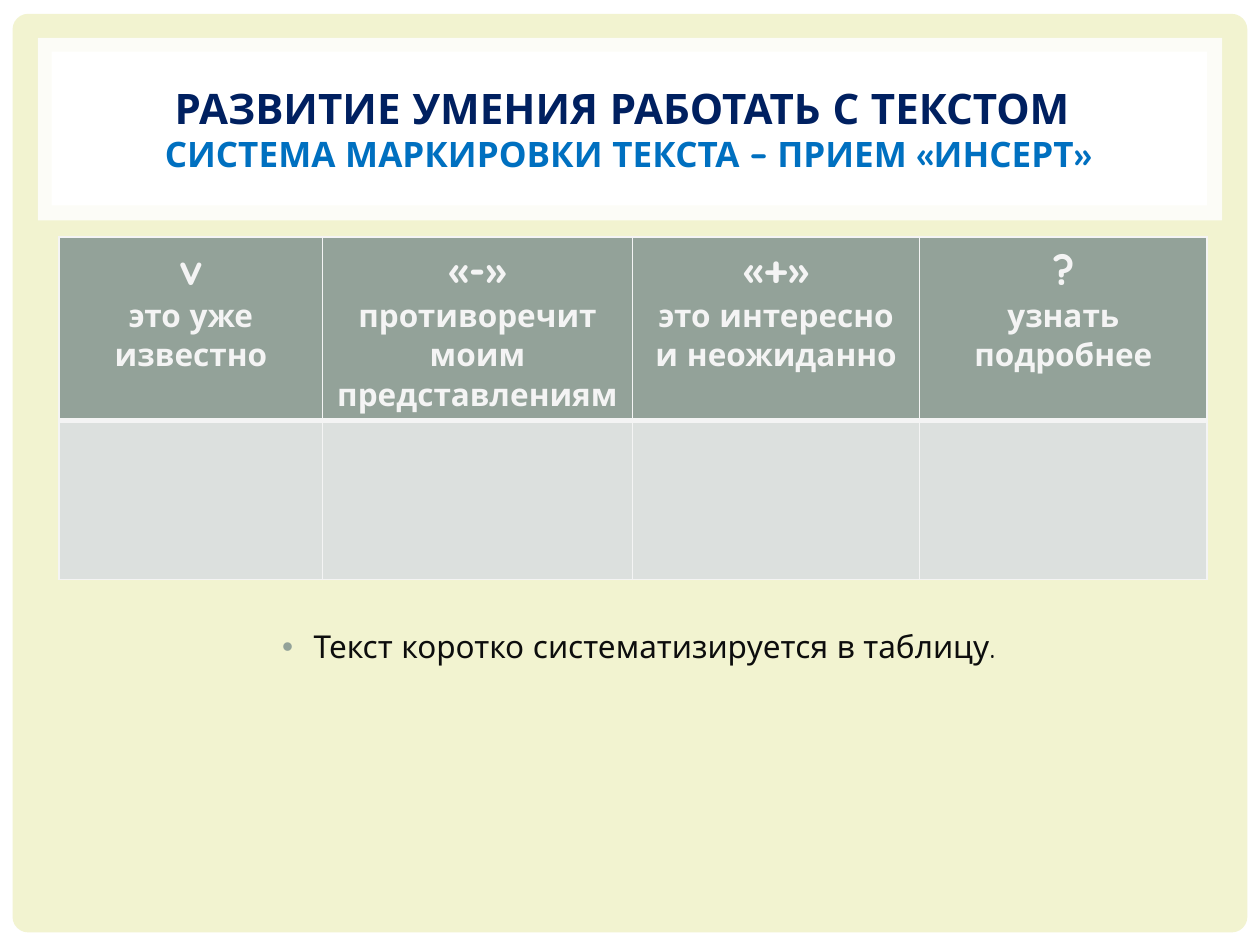
from lxml.etree import SubElement
from pptx import Presentation
from pptx.dml.color import RGBColor
from pptx.enum.shapes import MSO_SHAPE
from pptx.enum.text import MSO_ANCHOR, PP_ALIGN
from pptx.oxml.ns import qn
from pptx.util import Inches, Pt

FONT = "Quicksand"
CREAM, WHITE, SAGE, PALE, LIGHT = "F2F3D0", "FFFFFF", "93A299", "DCE0DE", "F4F4F4"
MARKS = [
    ("v", "это уже известно"),
    ("«-»", "противоречит моим представлениям"),
    ("«+»", "это интересно и неожиданно"),
    ("?", "узнать подробнее"),
]


def rgb(color):
    return RGBColor.from_string(color)


def style(r, size, color, bold=False):
    r.font.name = FONT
    r.font.size = Pt(size)
    r.font.bold = bold
    r.font.color.rgb = rgb(color)


def add_panel(slide, box, color, shape=MSO_SHAPE.RECTANGLE):
    sp = slide.shapes.add_shape(shape, *map(Inches, box))
    sp.shadow.inherit = False
    sp.fill.solid()
    sp.fill.fore_color.rgb = rgb(color)
    sp.line.fill.background()
    return sp


def add_text(slide, box):
    tf = slide.shapes.add_textbox(*map(Inches, box)).text_frame
    tf.word_wrap = True
    p = tf.paragraphs[0]
    p.alignment = PP_ALIGN.CENTER
    return tf, p


def add_background(slide):
    add_panel(slide, (0, 0, 10, 7.5), WHITE)
    card = add_panel(slide, (0.1, 0.11, 9.8, 7.29), CREAM, MSO_SHAPE.ROUNDED_RECTANGLE)
    card.adjustments[0] = 0.017


def add_title(slide, box):
    left, top, width, height = box
    frame = add_panel(slide, box, WHITE)
    color = frame.fill._xPr.find(qn("a:solidFill"))[0]
    SubElement(color, qn("a:alpha"), val="83000")
    add_panel(slide, (left + 0.11, top + 0.11, width - 0.23, height - 0.23), WHITE)

    tf, p = add_text(slide, (left + 0.17, top + 0.15, width - 0.37, height - 0.31))
    tf.vertical_anchor = MSO_ANCHOR.MIDDLE
    r = p.add_run()
    r.text = "РАЗВИТИЕ УМЕНИЯ РАБОТАТЬ С ТЕКСТОМ "
    style(r, 24, "002060", True)
    p.add_line_break()
    r = p.add_run()
    r.text = "СИСТЕМА МАРКИРОВКИ ТЕКСТА – ПРИЕМ «ИНСЕРТ»"
    style(r, 20, "0070C0", True)


def format_cell(cell, fill, top=1, bottom=1):
    """Borders come before the fill, as the order in a:tcPr requires."""
    tc_pr = cell._tc.get_or_add_tcPr()
    for side, width in (("L", 1), ("R", 1), ("T", top), ("B", bottom)):
        ln = SubElement(tc_pr, qn(f"a:ln{side}"), w=str(Pt(width)))
        SubElement(SubElement(ln, qn("a:solidFill")), qn("a:srgbClr"), val=LIGHT)
    cell.fill.solid()
    cell.fill.fore_color.rgb = rgb(fill)


def add_marks_table(slide, box, col_widths, row_heights):
    table = slide.shapes.add_table(2, len(MARKS), *map(Inches, box)).table
    for col, width in zip(table.columns, col_widths):
        col.width = Inches(width)
    for row, height in zip(table.rows, row_heights):
        row.height = Inches(height)
    for i, mark in enumerate(MARKS):
        head = table.cell(0, i)
        head.text_frame.text = "\n".join(mark)
        for p, size in zip(head.text_frame.paragraphs, (24, 18)):
            p.alignment = PP_ALIGN.CENTER
            style(p.runs[0], size, LIGHT, True)
        format_cell(head, SAGE, bottom=3)
        format_cell(table.cell(1, i), PALE, top=3)


def add_note(slide, box):
    tf, p = add_text(slide, box)
    p.text = "Текст коротко систематизируется в таблицу."
    style(p.runs[0], 18, "0D0D0D")
    p_pr = p._p.get_or_add_pPr()
    p_pr.set("marL", str(Inches(0.38)))
    p_pr.set("indent", str(Inches(-0.25)))
    space = SubElement(p_pr, qn("a:spcBef"))
    SubElement(space, qn("a:spcPct"), val="20000")
    SubElement(SubElement(p_pr, qn("a:buClr")), qn("a:srgbClr"), val=SAGE)
    SubElement(p_pr, qn("a:buFont"), typeface="Arial")
    SubElement(p_pr, qn("a:buChar"), char="•")


def main():
    prs = Presentation()
    prs.slide_width, prs.slide_height = Inches(10), Inches(7.5)
    slide = prs.slides.add_slide(prs.slide_layouts[6])
    slide.background.fill.solid()
    slide.background.fill.fore_color.rgb = rgb(CREAM)
    add_background(slide)
    add_title(slide, (0.3, 0.3, 9.4, 1.45))
    add_marks_table(slide, (0.47, 1.88, 9.11, 2.72), (2.09, 2.46, 2.28, 2.28), (1.46, 1.26))
    add_note(slide, (0.51, 4.93, 8.99, 1.77))
    prs.save("out.pptx")


if __name__ == "__main__":
    main()
